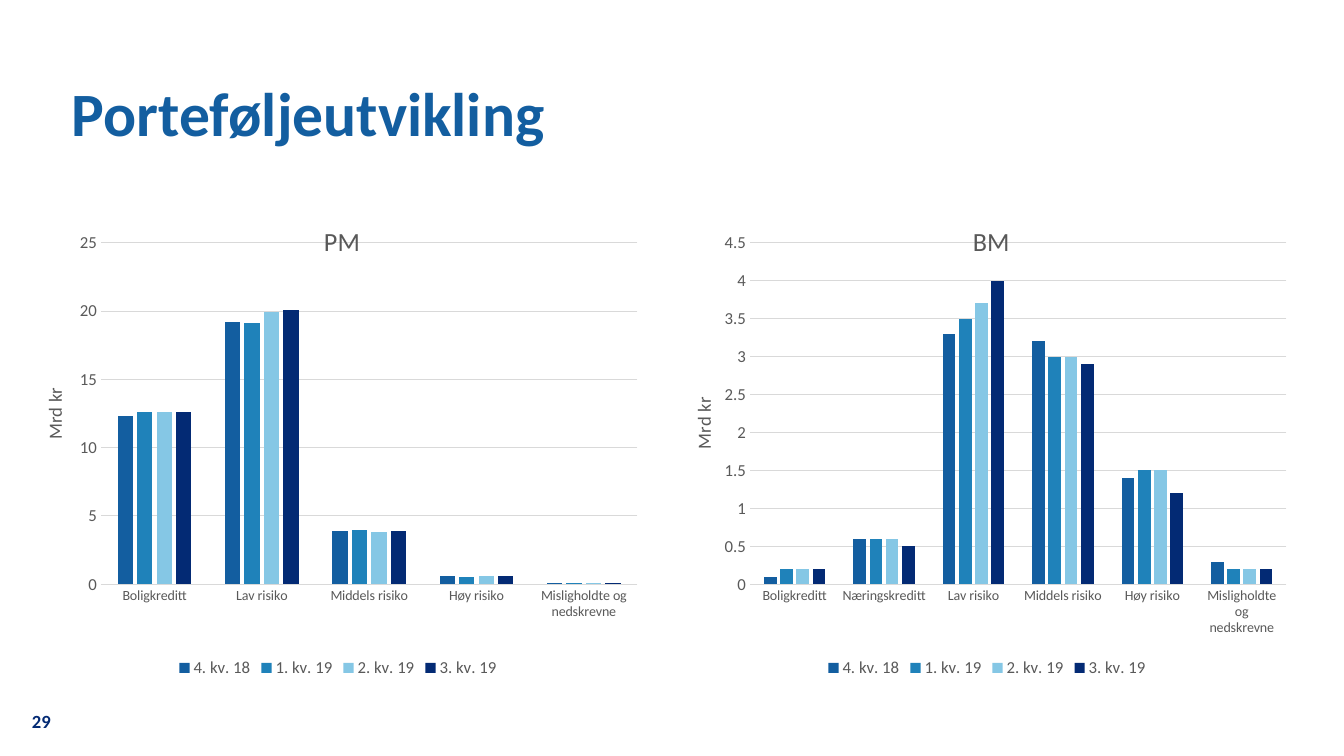
from dataclasses import dataclass

from lxml.etree import SubElement
from pptx import Presentation
from pptx.chart.axis import ValueAxis
from pptx.chart.chart import Chart
from pptx.chart.data import CategoryChartData
from pptx.dml.color import RGBColor
from pptx.enum.chart import XL_CHART_TYPE, XL_LEGEND_POSITION, XL_TICK_MARK
from pptx.enum.text import MSO_ANCHOR
from pptx.oxml import parse_xml
from pptx.oxml.ns import nsdecls, qn
from pptx.slide import Slide
from pptx.text.text import Font
from pptx.util import Emu, Pt

FONT = "Calibri"
COLORS = {
    "title": "135EA0",
    "number": "032A74",
    "chart_text": "595959",
    "line": "D9D9D9",
}
QUARTERS = {
    "4. kv. 18": "135EA0",
    "1. kv. 19": "1F82BA",
    "2. kv. 19": "85C7E5",
    "3. kv. 19": "032A74",
}
CHART_TOP, CHART_WIDTH, CHART_HEIGHT = 194, 624, 488
DEFAULTED = "Misligholdte og\nnedskrevne"


@dataclass(frozen=True)
class Label:
    text: str
    left: int
    top: int
    width: int
    height: int
    size: float
    color: str
    wrap: bool
    anchor: MSO_ANCHOR
    line_spacing: float


@dataclass(frozen=True)
class Portfolio:
    title: str
    left: int
    maximum: float
    step: float
    axis_title_top: float
    risks: dict[str, tuple[float, ...]]  # one value per quarter


LABELS = [
    Label("Porteføljeutvikling", 72, 82, 1159, 74, 44, "title", True, MSO_ANCHOR.MIDDLE, 0.8),
    Label("29", 32, 710, 22, 22, 13.3, "number", False, MSO_ANCHOR.TOP, 1.0),
]
PORTFOLIOS = [
    Portfolio("BM", 675, 4.5, 0.5, 0.41, {
        "Boligkreditt": (0.1, 0.2, 0.2, 0.2),
        "Næringskreditt": (0.6, 0.6, 0.6, 0.5),
        "Lav risiko": (3.3, 3.5, 3.7, 4),
        "Middels risiko": (3.2, 3, 3, 2.9),
        "Høy risiko": (1.4, 1.5, 1.5, 1.2),
        DEFAULTED: (0.3, 0.2, 0.2, 0.2),
    }),
    Portfolio("PM", 26, 25, 5, 0.39, {
        "Boligkreditt": (12.3, 12.6, 12.6, 12.6),
        "Lav risiko": (19.2, 19.1, 19.9, 20.1),
        "Middels risiko": (3.9, 4, 3.8, 3.9),
        "Høy risiko": (0.6, 0.5, 0.6, 0.6),
        DEFAULTED: (0.1, 0.1, 0.1, 0.1),
    }),
]


def px(length: int) -> Emu:
    return Emu(round(length * 914400 / 100.8))


def rgb(name: str) -> RGBColor:
    return RGBColor.from_string(COLORS[name])


def style_font(font: Font, size: float, color: str, bold: bool = False) -> None:
    font.name = FONT
    font.size = Pt(size)
    font.bold = bold
    font.color.rgb = rgb(color)


def set_layout(parent, index: int, **settings) -> None:
    """Place a chart part by fractions of the chart area."""
    for old in parent.findall(qn("c:layout")):
        parent.remove(old)
    layout = parse_xml(f"<c:layout {nsdecls('c')}/>")
    manual = SubElement(layout, qn("c:manualLayout"))
    for tag, value in settings.items():
        SubElement(manual, qn(f"c:{tag}")).set("val", str(value))
    parent.insert(index, layout)


def set_title(owner: Chart | ValueAxis, text: str, size: float, x: float, y: float) -> None:
    owner.has_title = True
    title = owner.chart_title if isinstance(owner, Chart) else owner.axis_title
    title.text_frame.text = text
    style_font(title.text_frame.paragraphs[0].font, size, "chart_text")
    if isinstance(owner, ValueAxis):
        body = title.text_frame._txBody.bodyPr
        body.set("rot", "-5400000")
        body.set("vert", "horz")
    set_layout(title._element, 1, xMode="edge", yMode="edge", x=x, y=y)


def add_label(slide: Slide, label: Label) -> None:
    box = slide.shapes.add_textbox(
        px(label.left), px(label.top), px(label.width), px(label.height))
    frame = box.text_frame
    frame.margin_left = frame.margin_right = frame.margin_top = frame.margin_bottom = 0
    frame.word_wrap = label.wrap
    frame.vertical_anchor = label.anchor
    frame.text = label.text
    paragraph = frame.paragraphs[0]
    paragraph.line_spacing = label.line_spacing
    style_font(paragraph.font, label.size, label.color, bold=True)


def style_axes(chart: Chart, portfolio: Portfolio) -> None:
    for axis, size in ((chart.category_axis, 10), (chart.value_axis, 12)):
        axis.major_tick_mark = axis.minor_tick_mark = XL_TICK_MARK.NONE
        style_font(axis.tick_labels.font, size, "chart_text")
    value_axis = chart.value_axis
    value_axis.minimum_scale = 0
    value_axis.maximum_scale = portfolio.maximum
    value_axis.major_unit = portfolio.step
    value_axis.format.line.fill.background()
    value_axis.has_major_gridlines = True
    for line in (chart.category_axis.format.line, value_axis.major_gridlines.format.line):
        line.color.rgb = rgb("line")
        line.width = Pt(0.75)
    set_title(value_axis, "Mrd kr", 13.3, 0.02, portfolio.axis_title_top)


def add_portfolio_chart(slide: Slide, portfolio: Portfolio) -> None:
    data = CategoryChartData()
    data.categories = list(portfolio.risks)
    for quarter, values in zip(QUARTERS, zip(*portfolio.risks.values())):
        data.add_series(quarter, values)
    chart = slide.shapes.add_chart(
        XL_CHART_TYPE.COLUMN_CLUSTERED, px(portfolio.left), px(CHART_TOP),
        px(CHART_WIDTH), px(CHART_HEIGHT), data).chart
    chart.font.name = FONT
    chart.font.size = Pt(10)

    # Columns
    plot = chart.plots[0]
    plot.gap_width, plot.overlap = 219, -27
    plot.vary_by_categories = False
    for series, color in zip(plot.series, QUARTERS.values()):
        series.format.fill.solid()
        series.format.fill.fore_color.rgb = RGBColor.from_string(color)
    set_layout(chart._chartSpace.chart.plotArea, 0, layoutTarget="inner",
               xMode="edge", yMode="edge", x=0.12, y=0.1, w=0.86, h=0.7)

    # Titles, axes and legend
    set_title(chart, portfolio.title, 18.7, 0.47, 0.05)
    style_axes(chart, portfolio)
    chart.has_legend = True
    chart.legend.position = XL_LEGEND_POSITION.BOTTOM
    chart.legend.include_in_layout = False
    style_font(chart.legend.font, 12, "chart_text")


def main() -> None:
    presentation = Presentation()
    presentation.slide_width, presentation.slide_height = px(1344), px(756)
    slide = presentation.slides.add_slide(presentation.slide_layouts[6])
    for label in LABELS:
        add_label(slide, label)
    for portfolio in PORTFOLIOS:
        add_portfolio_chart(slide, portfolio)
    presentation.save("out.pptx")


if __name__ == "__main__":
    main()
